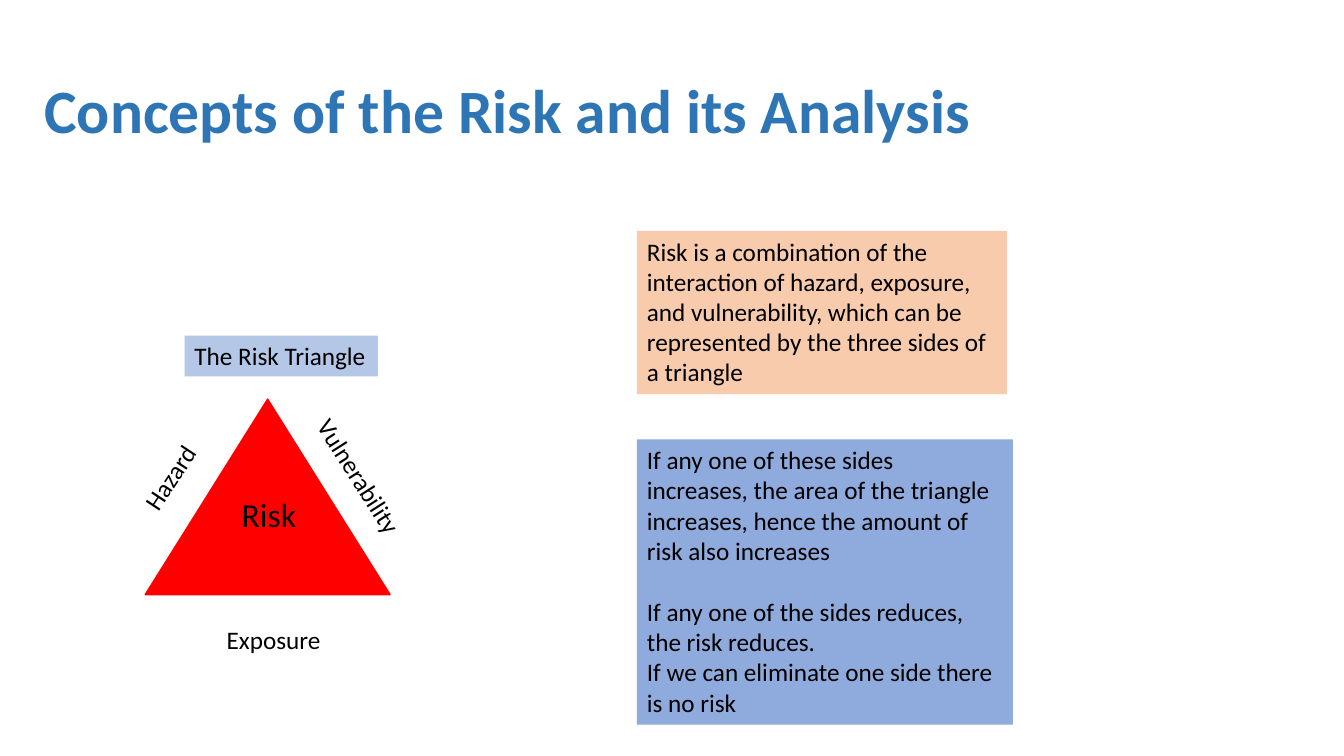
from dataclasses import dataclass

from pptx import Presentation
from pptx.dml.color import RGBColor
from pptx.enum.shapes import MSO_SHAPE
from pptx.enum.text import MSO_ANCHOR, MSO_AUTO_SIZE, PP_ALIGN
from pptx.util import Pt

TRIANGLE = MSO_SHAPE.ISOSCELES_TRIANGLE
MIDDLE = MSO_ANCHOR.MIDDLE
FIT_SHAPE = MSO_AUTO_SIZE.SHAPE_TO_FIT_TEXT
NO_FIT = MSO_AUTO_SIZE.NONE
LEFT = PP_ALIGN.LEFT
TITLE_ONLY = 5


@dataclass(frozen=True)
class Theme:
    font: str = "Calibri"
    title: str = "2E75B6"
    ink: str = "000000"
    risk: str = "FF0000"
    caption: str = "B4C7E7"
    definition: str = "F8CBAD"
    effects: str = "8FAADC"
    title_size: int = 44
    risk_size: int = 24
    body_size: int = 18
    line_height: float = 1.22


class SlideBuilder:
    def __init__(self, prs, theme):
        self.theme = theme
        self.s = prs.slides.add_slide(prs.slide_layouts[TITLE_ONLY])

    def add_run(self, p, text, size, color, bold=False):
        r = p.add_run()
        r.text = text
        style = {"name": self.theme.font, "size": Pt(size), "bold": bold}
        for name, value in style.items():
            setattr(r.font, name, value)
        r.font.color.rgb = RGBColor.from_string(color)

    def title(self, text, box):
        sp = self.s.shapes.title
        for name, value in zip(("left", "top", "width", "height"), box):
            setattr(sp, name, Pt(value))
        tf = sp.text_frame
        frame = {"vertical_anchor": MIDDLE, "word_wrap": True, "auto_size": NO_FIT}
        for name, value in frame.items():
            setattr(tf, name, value)
        p = tf.paragraphs[0]
        p.alignment, p.line_spacing = LEFT, 0.9
        self.add_run(p, text, self.theme.title_size, self.theme.title, True)

    def triangle(self, box, color):
        sp = self.s.shapes.add_shape(TRIANGLE, *map(Pt, box))
        sp.shadow.inherit = False
        rgb = RGBColor.from_string(color)
        sp.fill.solid()
        sp.fill.fore_color.rgb = rgb
        sp.line.color.rgb = rgb
        sp.line.width = Pt(1)

    def text(self, groups, box, fill=None, size=None, rotation=0):
        size = size or self.theme.body_size
        sp = self.s.shapes.add_textbox(*map(Pt, box))
        sp.rotation = rotation
        if fill:
            sp.fill.solid()
            sp.fill.fore_color.rgb = RGBColor.from_string(fill)
        tf = sp.text_frame
        tf.word_wrap, tf.auto_size = False, FIT_SHAPE
        p = None
        for group in groups:
            for i, line in enumerate(group):
                gap = p is not None and i == 0
                p = tf.add_paragraph() if p is not None else tf.paragraphs[0]
                p.alignment = LEFT
                if gap:
                    p.space_before = Pt(size * self.theme.line_height)
                self.add_run(p, line, size, self.theme.ink)


DEFINITION = [[
    "Risk is a combination of the",
    "interaction of hazard, exposure,",
    "and vulnerability, which can be",
    "represented by the three sides of",
    "a triangle",
]]
EFFECTS = [
    [
        "If any one of these sides",
        "increases, the area of the triangle",
        "increases, hence the amount of",
        "risk also increases",
    ],
    [
        "If any one of the sides reduces,",
        "the risk reduces.",
        "If we can eliminate one side there",
        "is no risk",
    ],
]
SIDES = [
    ("Vulnerability", (203, 326.2, 108, 29), 57.4),
    ("Hazard", (88.6, 326.2, 65.5, 29), 303.5),
    ("Exposure", (154.8, 442.1, 82, 29), 0),
]


def main():
    theme = Theme()
    prs = Presentation()
    prs.slide_width, prs.slide_height = Pt(960), Pt(540)
    slide = SlideBuilder(prs, theme)
    slide.title("Concepts of the Risk and its Analysis", (24.5, 28.8, 913, 104.4))
    slide.triangle((103.7, 285.1, 175, 139.7), theme.risk)
    slide.text([["The Risk Triangle"]], (131.8, 239.8, 138.2, 29), theme.caption)
    slide.text([["Risk"]], (165.6, 349.2, 54.7, 36), size=theme.risk_size)
    for label, box, rotation in SIDES:
        slide.text([[label]], box, rotation=rotation)
    slide.text(DEFINITION, (455, 164.9, 264.2, 116.6), theme.definition)
    slide.text(EFFECTS, (455, 313.9, 268.6, 203.8), theme.effects)
    prs.save("out.pptx")


if __name__ == "__main__":
    main()
